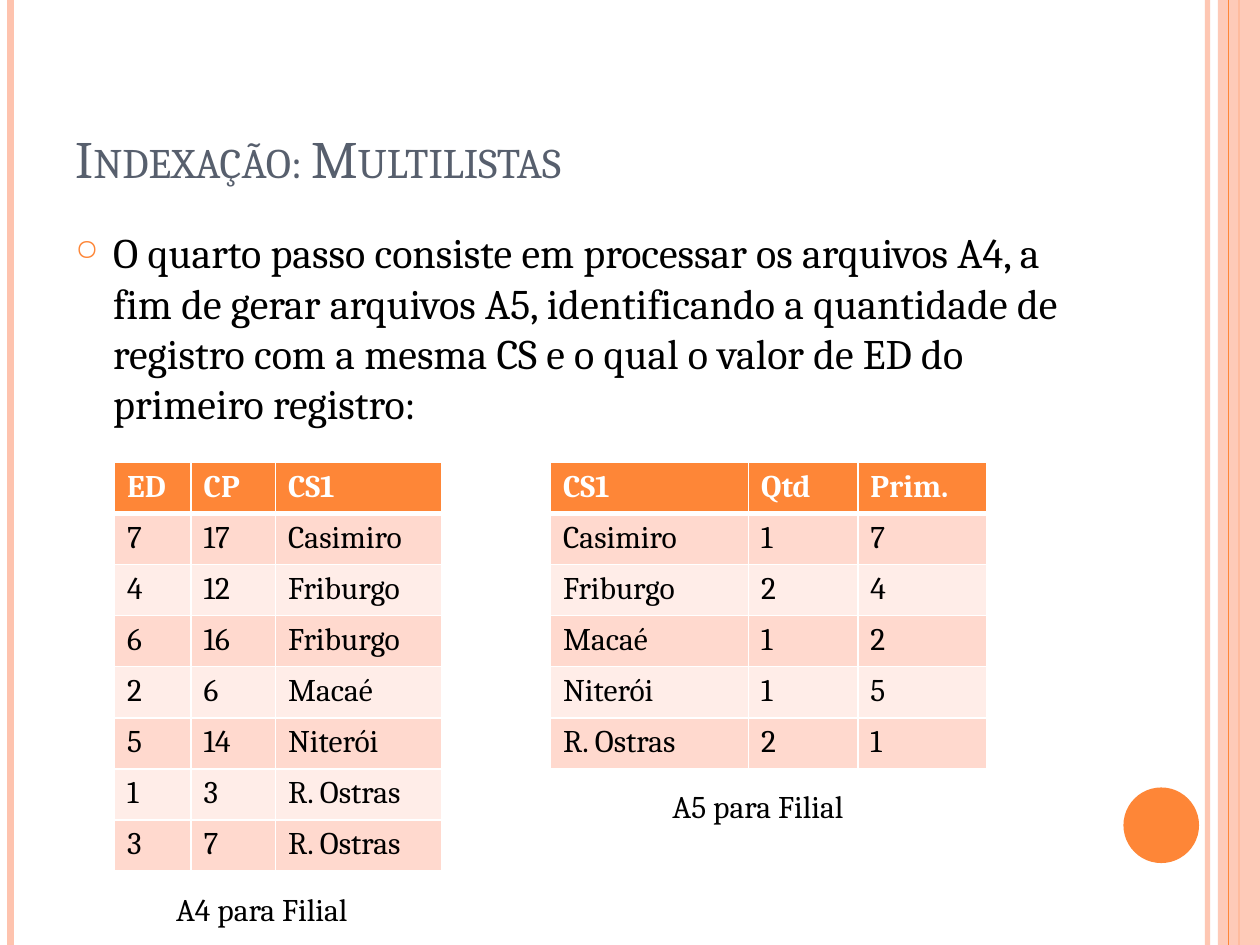
from lxml import etree
from pptx import Presentation
from pptx.dml.color import RGBColor
from pptx.enum.shapes import MSO_CONNECTOR, MSO_SHAPE
from pptx.enum.text import MSO_ANCHOR, MSO_AUTO_SIZE
from pptx.oxml.ns import qn
from pptx.util import Pt

STRAIGHT = MSO_CONNECTOR.STRAIGHT
RECTANGLE, OVAL = MSO_SHAPE.RECTANGLE, MSO_SHAPE.OVAL
TOP, BOTTOM = MSO_ANCHOR.TOP, MSO_ANCHOR.BOTTOM
FIT_SHAPE = MSO_AUTO_SIZE.SHAPE_TO_FIT_TEXT

ORANGE = RGBColor(0xFE, 0x86, 0x37)
PEACH = RGBColor(0xFE, 0xC3, 0xAE)
SLATE = RGBColor(0x57, 0x5F, 0x6D)
BAND_DARK = RGBColor(0xFF, 0xD9, 0xCE)
BAND_LIGHT = RGBColor(0xFF, 0xED, 0xE8)
WHITE = RGBColor(0xFF, 0xFF, 0xFF)
BLACK = RGBColor(0, 0, 0)

WIDTH, HEIGHT = 720, 540
ROW_HEIGHT = 29.2
CAPTION_GAP = 7

A4_ROWS = [
    ("ED", "CP", "CS1"),
    ("7", "17", "Casimiro"),
    ("4", "12", "Friburgo"),
    ("6", "16", "Friburgo"),
    ("2", "6", "Macaé"),
    ("5", "14", "Niterói"),
    ("1", "3", "R. Ostras"),
    ("3", "7", "R. Ostras"),
]
A5_ROWS = [
    ("CS1", "Qtd", "Prim."),
    ("Casimiro", "1", "7"),
    ("Friburgo", "2", "4"),
    ("Macaé", "1", "2"),
    ("Niterói", "1", "5"),
    ("R. Ostras", "2", "1"),
]


def add_child(parent, tag, **attributes):
    return etree.SubElement(parent, qn(tag), attributes)


def set_opacity(owner, percent):
    """Make the solid colour inside an element partly transparent."""
    colour = next(owner.iter(qn("a:srgbClr")))
    add_child(colour, "a:alpha", val=str(percent * 1000))


def write(paragraph, text, size, color, bold=False):
    run = paragraph.add_run()
    run.text = text
    run.font.color.rgb = color
    style = {"name": "Cambria", "size": Pt(size), "bold": bold}
    for attribute, value in style.items():
        setattr(run.font, attribute, value)
    return run


def add_text(slide, box, text, size, color, **frame_format):
    area = slide.shapes.add_textbox(*map(Pt, box))
    frame = area.text_frame
    for attribute, value in frame_format.items():
        setattr(frame, attribute, value)
    paragraph = frame.paragraphs[0]
    return paragraph, write(paragraph, text, size, color)


def add_rule(slide, x, color, weight, opacity=100):
    """Draw a vertical line over the full slide height."""
    rule = slide.shapes.add_connector(STRAIGHT, Pt(x), 0, Pt(x), Pt(HEIGHT))
    rule.line.color.rgb = color
    rule.line.width = Pt(weight)
    properties = rule._element.spPr
    if opacity < 100:
        set_opacity(properties, opacity)
    add_child(properties, "a:effectLst")


def add_solid(slide, preset, box, color):
    solid = slide.shapes.add_shape(preset, *map(Pt, box))
    solid.shadow.inherit = False
    solid.fill.solid()
    solid.fill.fore_color.rgb = color
    solid.line.fill.background()
    return solid


def add_margins(slide):
    add_rule(slide, 690, PEACH, 3, 93)
    add_rule(slide, 6, PEACH, 4.5)
    add_rule(slide, 708, ORANGE, 1.5)
    band = add_solid(slide, RECTANGLE, (696, 0, WIDTH - 696, HEIGHT), PEACH)
    set_opacity(band._element.spPr, 87)
    add_rule(slide, 702, ORANGE, 0.75)
    add_solid(slide, OVAL, (642, 450, 43.2, 43.2), ORANGE)


def add_title(slide, box):
    _, title = add_text(slide, box, "Indexação: Multilistas", 30, SLATE,
                        word_wrap=True, vertical_anchor=BOTTOM)
    title.font._element.set("cap", "small")


def add_body(slide, box):
    step, _ = add_text(
        slide, box,
        "O quarto passo consiste em processar os arquivos A4, a fim de gerar "
        "arquivos A5, identificando a quantidade de registro com a mesma CS "
        "e o qual o valor de ED do primeiro registro:",
        24, BLACK, word_wrap=True, vertical_anchor=TOP)
    step.space_before = Pt(6)
    properties = step._p.get_or_add_pPr()
    indent = Pt(21.6)
    properties.set("marL", str(indent))
    properties.set("indent", str(-indent))
    add_child(add_child(properties, "a:buClr"), "a:srgbClr", val=str(ORANGE))
    add_child(properties, "a:buSzPct", val="70000")
    add_child(properties, "a:buChar", char="○")


def add_borders(cell, weights):
    """Give the cell white borders; weights maps L, R, T and B to points."""
    properties = cell._tc.get_or_add_tcPr()
    for side, weight in weights.items():
        border = add_child(properties, f"a:ln{side}", w=str(Pt(weight)))
        add_child(add_child(border, "a:solidFill"), "a:srgbClr", val=str(WHITE))


def add_file_table(slide, left, top, widths, rows, caption, caption_left):
    """Place a banded table with its caption below it."""
    height = ROW_HEIGHT * len(rows)
    box = (left, top, sum(widths), height)
    table = slide.shapes.add_table(len(rows), len(widths), *map(Pt, box)).table
    for column, width in zip(table.columns, widths):
        column.width = Pt(width)
    for index, values in enumerate(rows):
        table.rows[index].height = Pt(ROW_HEIGHT)
        header = index == 0
        band = BAND_DARK if index % 2 else BAND_LIGHT
        weights = {"L": 1, "R": 1, "T": 3 if index == 1 else 1,
                   "B": 3 if header else 1}
        for column, value in enumerate(values):
            cell = table.cell(index, column)
            add_borders(cell, weights)
            cell.fill.solid()
            cell.fill.fore_color.rgb = ORANGE if header else band
            write(cell.text_frame.paragraphs[0], value, 18,
                  WHITE if header else BLACK, header)
    add_text(slide, (caption_left, top + height + CAPTION_GAP, 131.8, 28.8),
             caption, 18, BLACK, word_wrap=False, auto_size=FIT_SHAPE)


def main():
    presentation = Presentation()
    presentation.slide_width, presentation.slide_height = Pt(WIDTH), Pt(HEIGHT)
    slide = presentation.slides.add_slide(presentation.slide_layouts[6])
    add_margins(slide)
    add_title(slide, (36, 21.6, 588, 90))
    add_body(slide, (36, 126, 588, 384))
    add_file_table(slide, 65.5, 264.2, (43.7, 48.3, 95.2), A4_ROWS,
                   "A4 para Filial", 93.6)
    add_file_table(slide, 314.6, 264.2, (113.2, 62.4, 73.6), A5_ROWS,
                   "A5 para Filial", 377.2)
    presentation.save("out.pptx")


if __name__ == "__main__":
    main()
